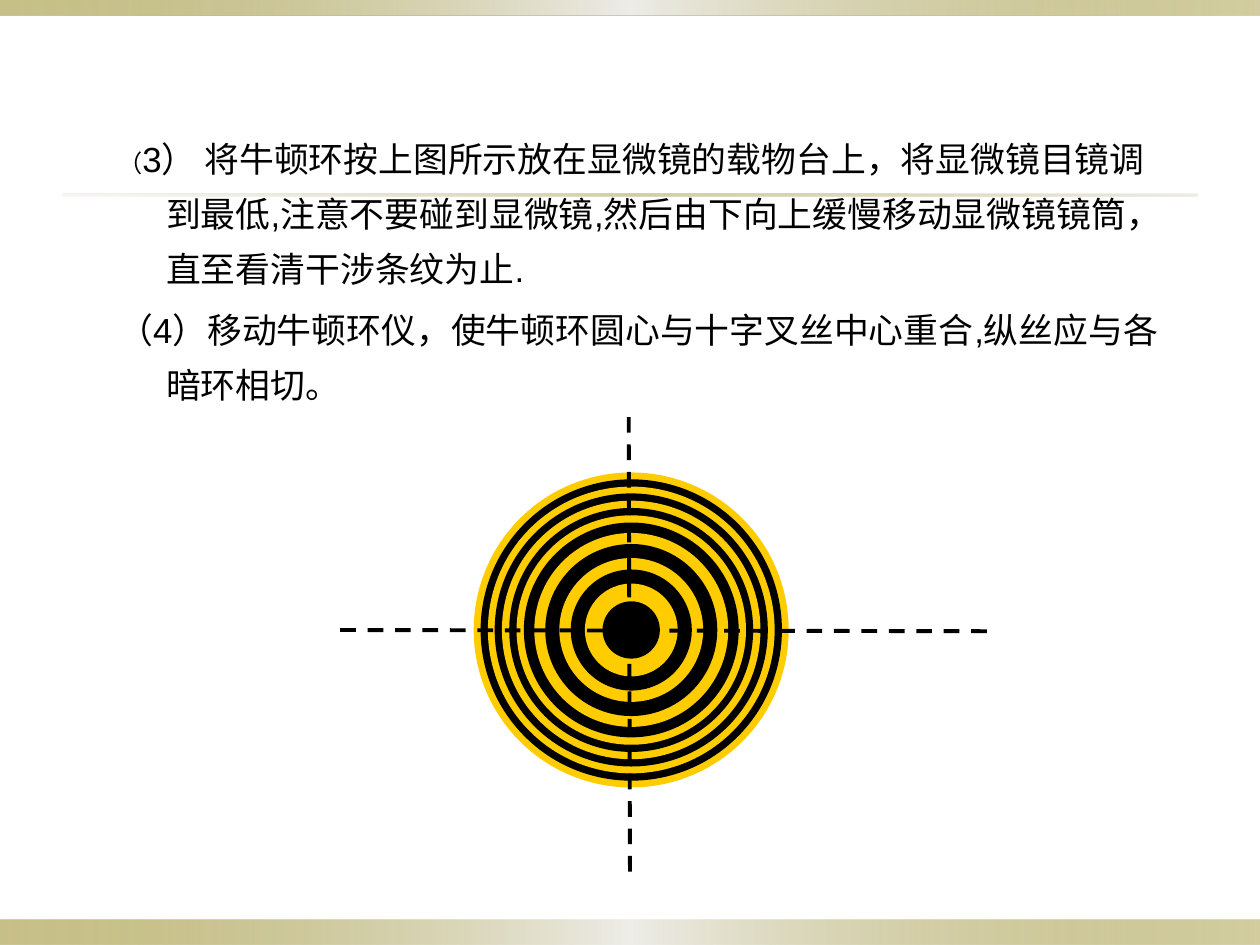
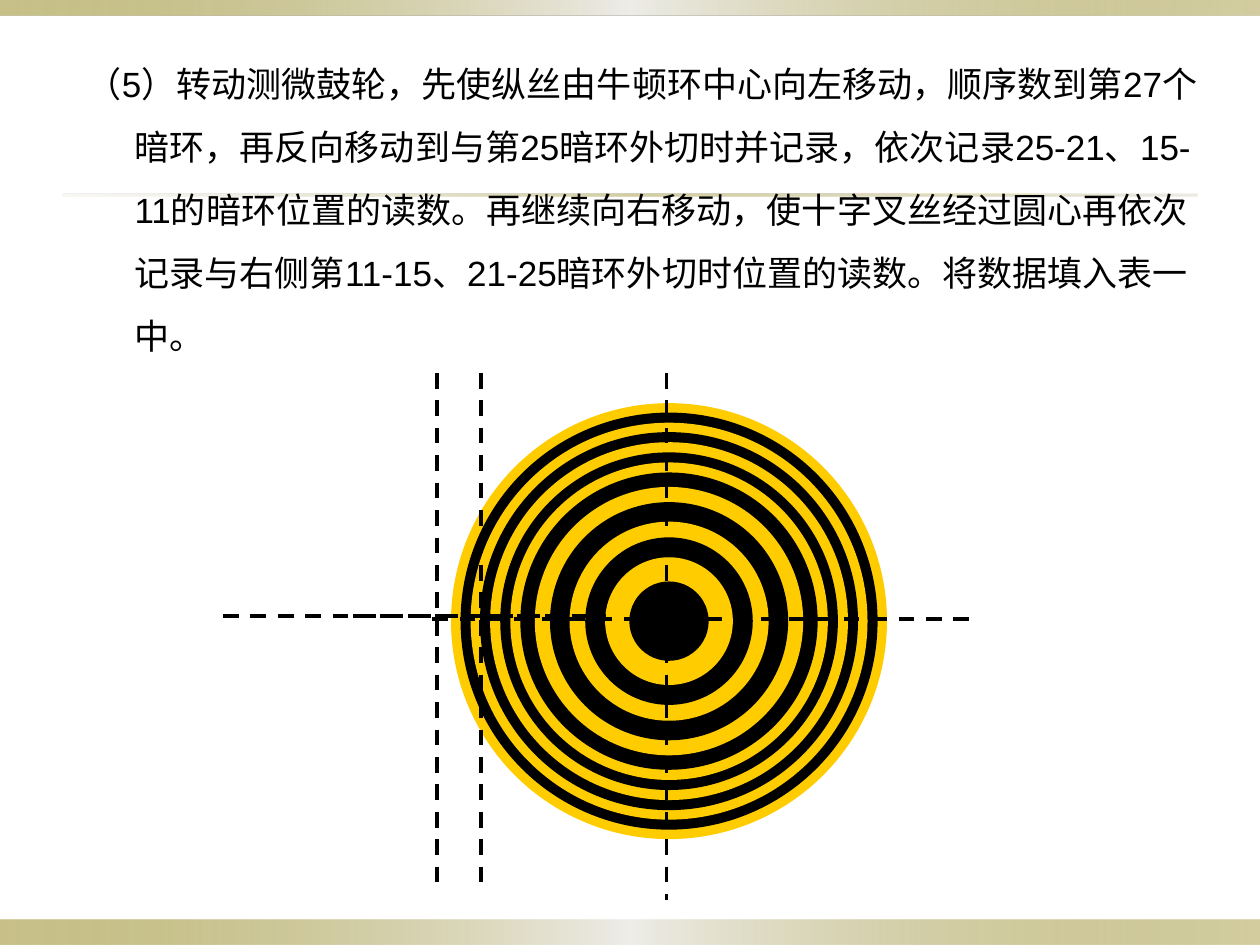
from lxml.etree import SubElement
from pptx import Presentation
from pptx.dml.color import RGBColor
from pptx.enum.dml import MSO_LINE
from pptx.enum.shapes import MSO_CONNECTOR, MSO_SHAPE
from pptx.oxml.ns import qn
from pptx.util import Inches, Pt

BLACK = "000000"
YELLOW = "FFCC00"
OLIVE = "918415"
EDGE_STOPS = [(0, OLIVE, 50), (50, "EEEDE8", 100), (100, OLIVE, 40)]
RULE_STOPS = [(0, "DCD9CC", 20), (50, OLIVE, 40), (100, "DCD9CC", 50)]
BANDS = [
    (0, 7.3, 10, 0.2, EDGE_STOPS),
    (0, 0, 10, 0.12, EDGE_STOPS),
    (0.5, 1.54, 9, 0.02, RULE_STOPS),
]
RING_DIAMETERS = [3.46, 3.31, 3.15, 3, 2.84, 2.68, 2.52, 2.36, 2.13, 1.89, 1.58, 1.33, 1, 0.63]

STEPS = [
    {
        "box": (0.84, 0.94, 8.57, 2.65),
        "pitch": 31.3,
        "paragraphs": [
            [
                ("（", 13.8),
                ("3） 将牛顿环按上图所示放在显微镜的载物台上，将显微镜目镜调到最低,注意不要碰到显微镜,然后由下向上缓慢移动显微镜镜筒，直至看清干涉条纹为止.", 19.9),
            ],
            [("（4）移动牛顿环仪，使牛顿环圆心与十字叉丝中心重合,纵丝应与各暗环相切。", 19.9)],
        ],
        "centre": (5.01, 5),
        "outer": 2.5,
        "crosshairs": [(2.7, 5, 7.91, 5.01), (4.99, 3.31, 5, 6.98)],
    },
    {
        "box": (0.59, 0.28, 9.14, 2.68),
        "pitch": 36,
        "paragraphs": [
            [("（5）转动测微鼓轮，先使纵丝由牛顿环中心向左移动，顺序数到第27个暗环，再反向移动到与第25暗环外切时并记录，依次记录25-21、15-11的暗环位置的读数。再继续向右移动，使十字叉丝经过圆心再依次记录与右侧第11-15、21-25暗环外切时位置的读数。将数据填入表一中。", 20)],
        ],
        "centre": (5.31, 4.93),
        "outer": 3.46,
        "crosshairs": [
            (3.43, 4.91, 7.76, 4.91),
            (5.29, 2.96, 5.29, 7.14),
            (1.77, 4.89, 4.45, 4.89),
            (3.47, 2.96, 3.47, 7.06),
            (2.8, 4.89, 4.81, 4.89),
            (3.82, 2.96, 3.82, 7.06),
        ],
    },
]


def colour(value):
    return RGBColor.from_string(value)


def write(paragraph, text, size=20, color=BLACK, latin="Arial", asian="Noto Sans CJK SC"):
    run = paragraph.add_run()
    run.text = text
    run.font.size = Pt(size)
    run.font.name = latin
    run.font.color.rgb = colour(color)
    SubElement(run.font._element, qn("a:ea"), typeface=asian)


prs = Presentation()
prs.slide_width, prs.slide_height = Inches(10), Inches(7.5)

for step in STEPS:
    slide = prs.slides.add_slide(prs.slide_layouts[6])

    for left, top, width, height, stops in BANDS:
        band = slide.shapes.add_shape(
            MSO_SHAPE.RECTANGLE, Inches(left), Inches(top), Inches(width), Inches(height))
        band.shadow.inherit = False
        band.line.fill.background()
        band.fill.gradient()
        band.fill.gradient_angle = 0
        stop_list = band._element.spPr.find(qn("a:gradFill")).find(qn("a:gsLst"))
        stop_list.clear()
        for position, shade, opacity in stops:
            stop = SubElement(stop_list, qn("a:gs"), pos=str(position * 1000))
            tint = SubElement(stop, qn("a:srgbClr"), val=shade)
            SubElement(tint, qn("a:alpha"), val=str(opacity * 1000))

    centre_x, centre_y = step["centre"]
    scale = step["outer"] / RING_DIAMETERS[0]
    for index, ring_diameter in enumerate(RING_DIAMETERS):
        diameter = ring_diameter * scale
        ring = slide.shapes.add_shape(
            MSO_SHAPE.OVAL, Inches(centre_x - diameter / 2), Inches(centre_y - diameter / 2),
            Inches(diameter), Inches(diameter))
        ring.shadow.inherit = False
        ring.fill.solid()
        ring.fill.fore_color.rgb = colour(BLACK if index % 2 else YELLOW)
        if ring_diameter == 1:
            ring.line.color.rgb = colour(YELLOW)
            ring.line.width = Pt(1)
        else:
            ring.line.fill.background()

    instructions = slide.shapes.add_textbox(*map(Inches, step["box"])).text_frame
    instructions.word_wrap = True
    for index, runs in enumerate(step["paragraphs"]):
        paragraph = instructions.add_paragraph() if index else instructions.paragraphs[0]
        paragraph.line_spacing = Pt(step["pitch"])
        if index:
            paragraph.space_before = Pt(4)
        indent = Inches(0.38)
        properties = paragraph._p.get_or_add_pPr()
        properties.set("marL", str(indent))
        properties.set("indent", str(-indent))
        for text, size in runs:
            write(paragraph, text, size=size)

    for ends in step["crosshairs"]:
        hair = slide.shapes.add_connector(MSO_CONNECTOR.STRAIGHT, *map(Inches, ends))
        hair.line.color.rgb = colour(BLACK)
        hair.line.width = Pt(2.25)
        hair.line.dash_style = MSO_LINE.DASH
        SubElement(hair._element.spPr, qn("a:effectLst"))

prs.save("out.pptx")
